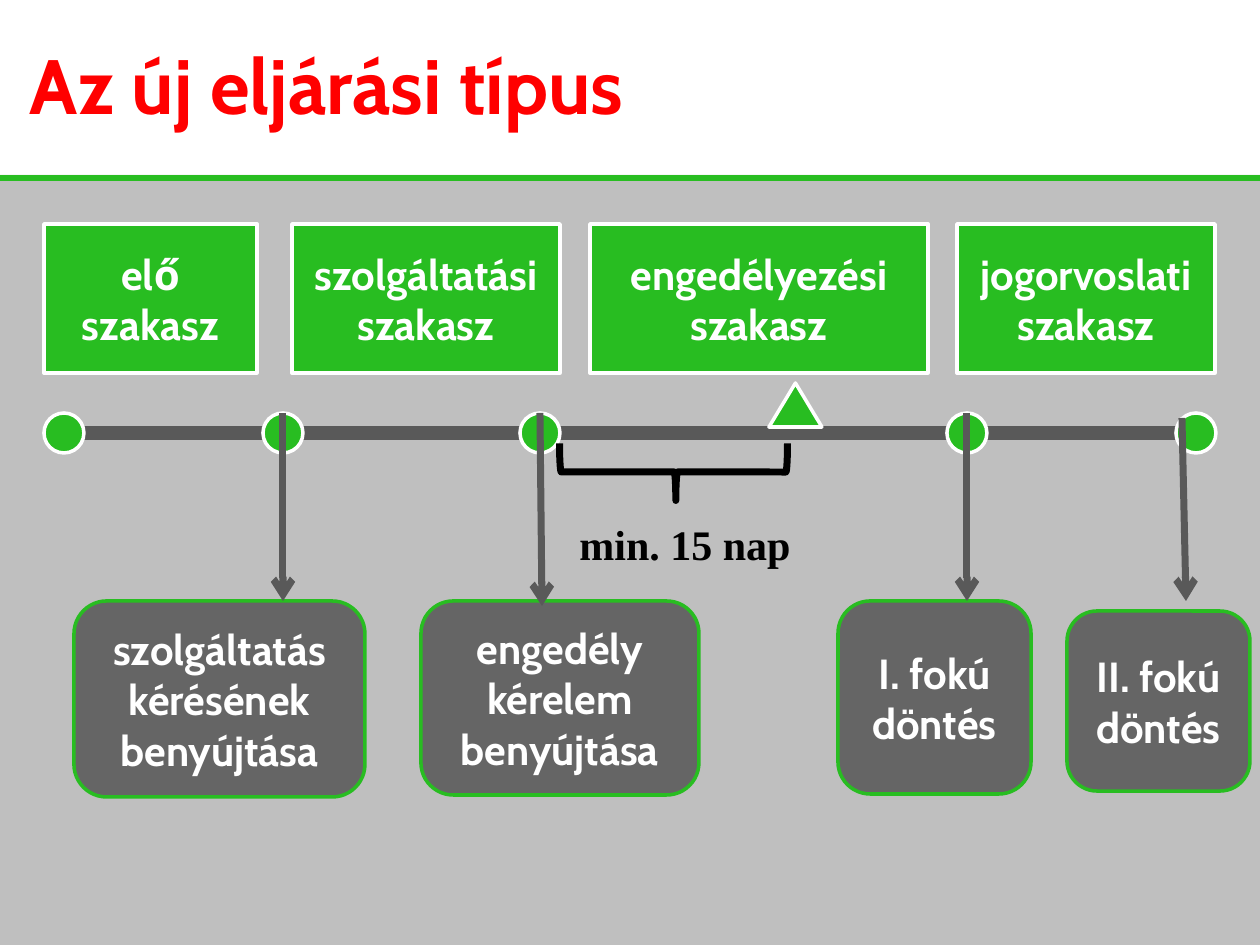
from dataclasses import dataclass

from lxml.etree import SubElement
from pptx import Presentation
from pptx.dml.color import RGBColor
from pptx.enum.shapes import MSO_CONNECTOR as Connector, MSO_SHAPE as Preset
from pptx.enum.text import MSO_ANCHOR as Anchor, PP_ALIGN as Align
from pptx.oxml import parse_xml
from pptx.oxml.ns import nsdecls, qn
from pptx.util import Emu, Pt

EMU_PER_PX = 914400 / 126
COLORS = {
    "green": "28BD21",
    "panel": "BFBFBF",
    "box": "656565",
    "axis": "595959",
    "white": "FFFFFF",
    "black": "000000",
    "red": "FF0000",
}
TITLE_SHADOW = (
    f'<a:effectLst {nsdecls("a")}><a:outerShdw blurRad="38100" dist="38100" dir="2700000">'
    '<a:srgbClr val="000000"><a:alpha val="43000"/></a:srgbClr></a:outerShdw></a:effectLst>'
)


@dataclass(frozen=True)
class Box:
    left: int
    top: int
    width: int
    height: int
    text: str = ""


@dataclass(frozen=True)
class Arrow:
    start: tuple[int, int]
    end: tuple[int, int]
    milestone: int | None = None


PHASE_TOP, PHASE_HEIGHT = 224, 149
PHASES = [
    Box(44, PHASE_TOP, 213, PHASE_HEIGHT, "elő szakasz"),
    Box(292, PHASE_TOP, 268, PHASE_HEIGHT, "szolgáltatási\nszakasz"),
    Box(590, PHASE_TOP, 338, PHASE_HEIGHT, "engedélyezési\nszakasz"),
    Box(957, PHASE_TOP, 258, PHASE_HEIGHT, "jogorvoslati\nszakasz"),
]
EVENTS = [
    Box(74, 601, 291, 196, "szolgáltatás\nkérésének\nbenyújtása"),
    Box(421, 601, 278, 194, "engedély kérelem benyújtása"),
    Box(838, 601, 193, 193, "I. fokú döntés"),
    Box(1067, 611, 183, 180, "II. fokú döntés"),
]
AXIS_Y = 433
MILESTONE_SIZE = 40
MILESTONE_CENTERS = [64, 283, 540, 967, 1196]
ARROWS = [
    Arrow((283, 413), (283, 601), 1),
    Arrow((540, 413), (542, 606), 2),
    Arrow((967, 413), (967, 601), 3),
    Arrow((1182, 418), (1186, 601)),
]


def px(length: int) -> Emu:
    return Emu(round(length * EMU_PER_PX))


def rgb(name: str) -> RGBColor:
    return RGBColor.from_string(COLORS[name])


def write(frame, text: str, *, size: int = 24, font: str = "Cabin", color: str = "white",
          align=Align.CENTER, anchor=Anchor.MIDDLE, spacing: int | None = None,
          shadow: bool = False) -> None:
    frame.word_wrap = True
    frame.vertical_anchor = anchor
    for index, line in enumerate(text.split("\n")):
        paragraph = frame.paragraphs[0] if index == 0 else frame.add_paragraph()
        paragraph.alignment = align
        if spacing:
            paragraph.line_spacing = Pt(spacing)
        run = paragraph.add_run()
        run.text = line
        run.font.size = Pt(size)
        run.font.bold = True
        run.font.color.rgb = rgb(color)
        run.font.name = font
        if shadow:
            run.font._element.find(qn("a:solidFill")).addnext(parse_xml(TITLE_SHADOW))


def draw_shape(slide, preset, box: Box, fill: str | None, line: str | None = None,
               weight: int = 2):
    shape = slide.shapes.add_shape(
        preset, px(box.left), px(box.top), px(box.width), px(box.height))
    shape.shadow.inherit = False
    if fill:
        shape.fill.solid()
        shape.fill.fore_color.rgb = rgb(fill)
    else:
        shape.fill.background()
    if line:
        shape.line.color.rgb = rgb(line)
        shape.line.width = Pt(weight)
    else:
        shape.line.fill.background()
    if box.text:
        write(shape.text_frame, box.text)
    return shape


def draw_line(slide, start: tuple[int, int], end: tuple[int, int], weight: int,
              arrowhead: bool = False):
    line = slide.shapes.add_connector(
        Connector.STRAIGHT, px(start[0]), px(start[1]), px(end[0]), px(end[1]))
    line.line.color.rgb = rgb("axis")
    line.line.width = Pt(weight)
    if arrowhead:
        SubElement(line.line._get_or_add_ln(), qn("a:tailEnd"), type="arrow")
    SubElement(line._element.spPr, qn("a:effectLst"))
    return line


def draw_label(slide, box: Box):
    return slide.shapes.add_textbox(
        px(box.left), px(box.top), px(box.width), px(box.height)).text_frame


def main() -> None:
    deck = Presentation()
    deck.slide_width, deck.slide_height = px(1260), px(945)
    slide = deck.slides.add_slide(deck.slide_layouts[6])

    draw_shape(slide, Preset.RECTANGLE, Box(0, 175, 1260, 770), "panel")
    draw_shape(slide, Preset.RECTANGLE, Box(0, 175, 1260, 6), "green")

    draw_line(slide, (54, AXIS_Y), (1192, AXIS_Y), 8)
    radius = MILESTONE_SIZE // 2
    milestones = [
        draw_shape(slide, Preset.OVAL,
                   Box(center - radius, AXIS_Y - radius, MILESTONE_SIZE, MILESTONE_SIZE),
                   "green", "white")
        for center in MILESTONE_CENTERS
    ]

    deadline = Box(561, 512, 248, 64, "min. 15 nap")
    write(draw_label(slide, deadline), deadline.text, font="Times New Roman",
          color="black", anchor=Anchor.TOP)

    for event in EVENTS:
        draw_shape(slide, Preset.ROUNDED_RECTANGLE, event, "box", "green")
    for phase in PHASES:
        draw_shape(slide, Preset.RECTANGLE, phase, "green", "white")

    brace = draw_shape(slide, Preset.RIGHT_BRACE, Box(645, 358, 57, 228), None, "black", 4)
    brace.rotation = 90
    brace.adjustments[0] = 0.03
    brace.adjustments[1] = 0.49

    for arrow in ARROWS:
        connector = draw_line(slide, arrow.start, arrow.end, 4, arrowhead=True)
        if arrow.milestone is not None:
            connector.begin_connect(milestones[arrow.milestone], 0)

    draw_shape(slide, Preset.ISOSCELES_TRIANGLE, Box(769, 383, 53, 44), "green", "white")

    heading = Box(0, 0, 1260, 175, "Az új eljárási típus")
    title = draw_label(slide, heading)
    title.margin_left, title.margin_top = px(30), px(15)
    title.margin_right = title.margin_bottom = 0
    write(title, heading.text, size=44, color="red", align=Align.LEFT, spacing=40, shadow=True)

    deck.save("out.pptx")


if __name__ == "__main__":
    main()
